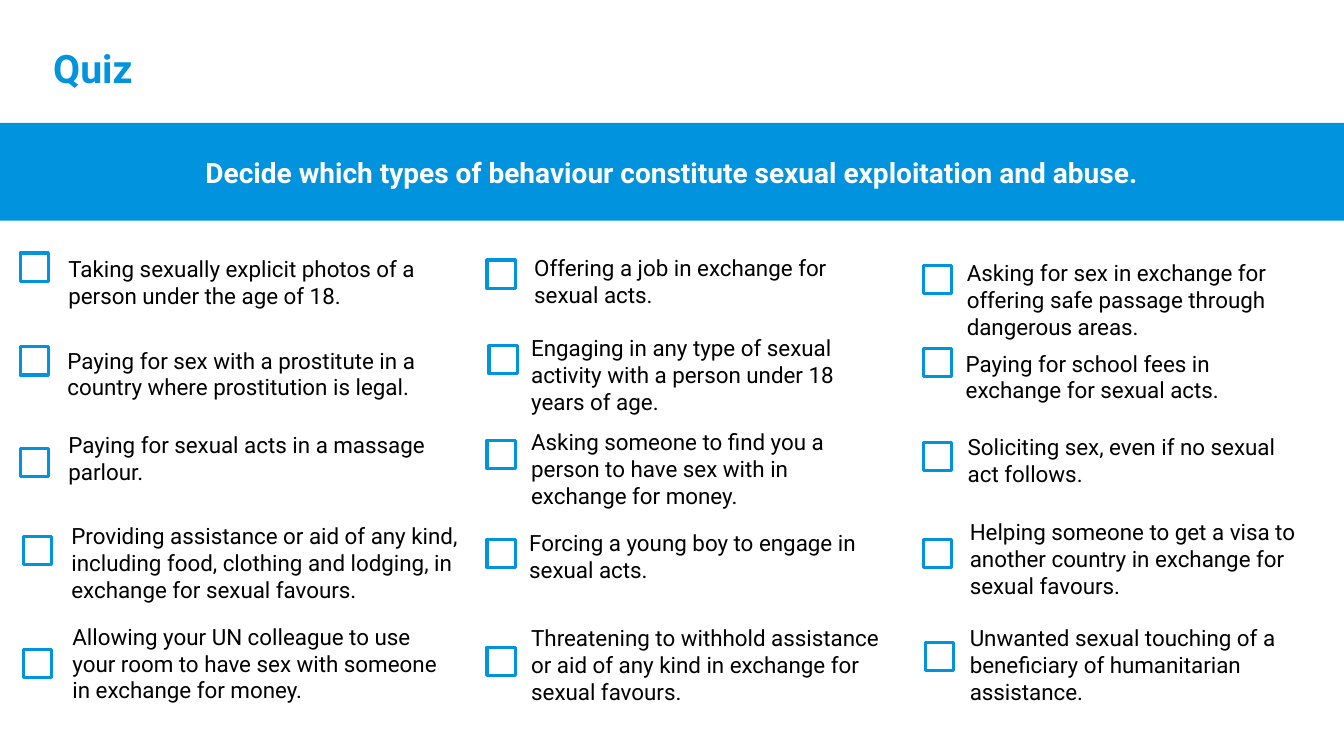
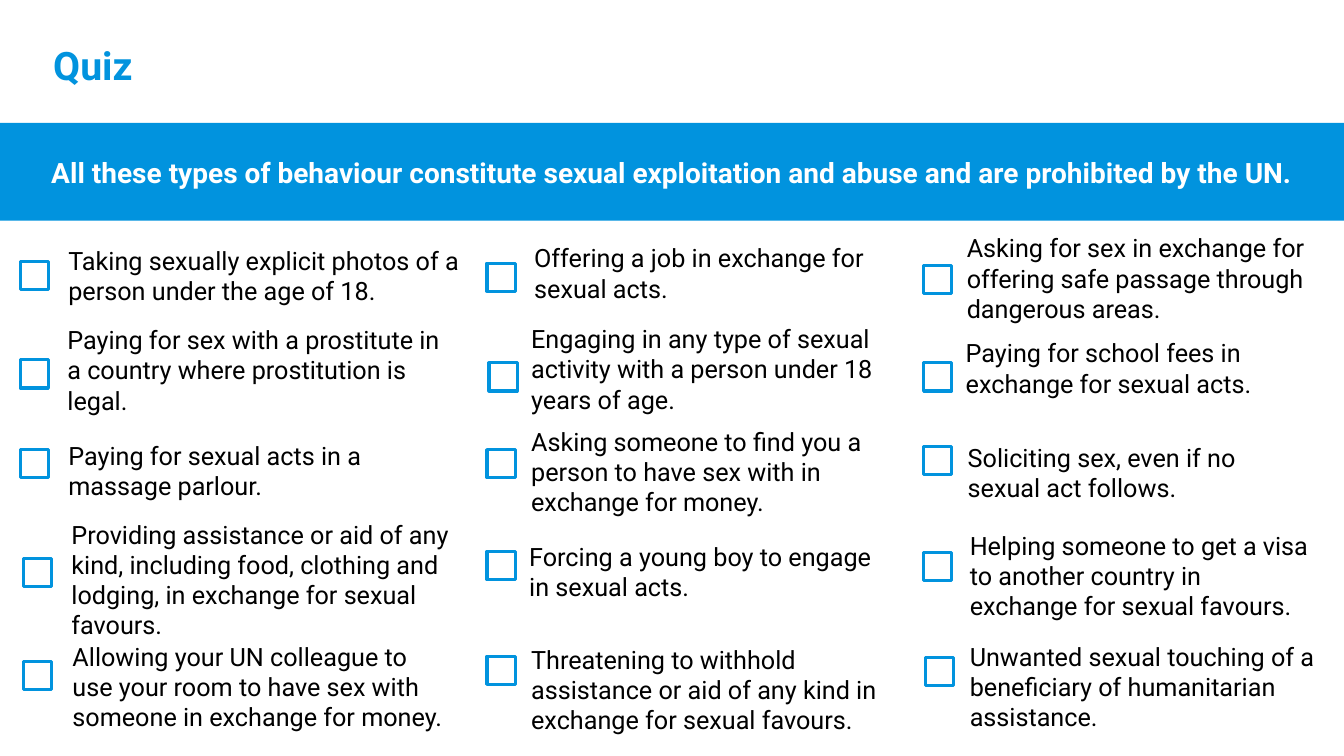
from pptx import Presentation
from pptx.dml.color import RGBColor
from pptx.enum.shapes import MSO_SHAPE
from pptx.enum.text import MSO_ANCHOR, MSO_AUTO_SIZE, PP_ALIGN
from pptx.util import Inches, Pt

RECT = MSO_SHAPE.RECTANGLE
MIDDLE = MSO_ANCHOR.MIDDLE
GROW = MSO_AUTO_SIZE.SHAPE_TO_FIT_TEXT
CENTER = PP_ALIGN.CENTER

FONT = "Roboto"
COLORS = {"blue": "0193DE", "white": "FFFFFF", "black": "000000"}
SLIDE_W, SLIDE_H = 13.33, 7.5
BOX_SIZE = 0.28

# Wording, checkbox left, text left, text width
BEHAVIOURS = [
    ("Taking sexually explicit photos of a person under the age of 18.", 0.2, 0.58, 4.33),
    ("Paying for sex with a prostitute in a country where prostitution is legal.",
     0.2, 0.57, 4.01),
    ("Paying for sexual acts in a massage parlour.", 0.2, 0.58, 4.15),
    ("Providing assistance or aid of any kind, including food, clothing and lodging, "
     "in exchange for sexual favours.", 0.23, 0.61, 4.05),
    ("Allowing your UN colleague to use your room to have sex with someone "
     "in exchange for money.", 0.23, 0.62, 3.95),
    ("Offering a job in exchange for sexual acts.", 4.83, 5.2, 3.74),
    ("Engaging in any type of sexual activity with a person under 18 years of age.",
     4.85, 5.17, 3.74),
    ("Asking someone to find you a person to have sex with in exchange for money.",
     4.83, 5.17, 3.7),
    ("Forcing a young boy to engage in sexual acts.", 4.83, 5.15, 3.79),
    ("Threatening to withhold assistance or aid of any kind in exchange for sexual favours.",
     4.83, 5.17, 3.87),
    ("Asking for sex in exchange for offering safe passage through dangerous areas.",
     9.16, 9.49, 3.98),
    ("Paying for school fees in exchange for sexual acts.", 9.16, 9.48, 3.62),
    ("Soliciting sex, even if no sexual act follows.", 9.16, 9.5, 3.6),
    ("Helping someone to get a visa to another country in exchange for sexual favours.",
     9.16, 9.52, 3.58),
    ("Unwanted sexual touching of a beneficiary of humanitarian assistance.",
     9.18, 9.52, 3.87),
]

# Rows hold checkbox top, text top and line count, in the order of BEHAVIOURS
SLIDES = [
    {
        "title_top": 0.39,
        "message": "Decide which types of behaviour constitute sexual exploitation and abuse.",
        "size": 16,
        "rows": [
            (2.51, 2.48, 2), (3.44, 3.39, 2), (4.45, 4.23, 2), (5.32, 5.13, 3), (6.44, 6.13, 3),
            (2.58, 2.47, 2), (3.43, 3.27, 3), (4.37, 4.2, 3), (5.35, 5.2, 2), (6.42, 6.14, 3),
            (2.63, 2.52, 3), (3.46, 3.42, 2), (4.39, 4.25, 2), (5.35, 5.09, 3), (6.37, 6.14, 3),
        ],
    },
    {
        "title_top": 0.36,
        "message": "All these types of behaviour constitute sexual exploitation and abuse "
                   "and are prohibited by the UN.",
        "size": 18,
        "rows": [
            (2.59, 2.38, 2), (3.57, 3.17, 3), (4.46, 4.32, 2), (5.54, 5.1, 4), (6.56, 6.31, 3),
            (2.61, 2.36, 2), (3.6, 3.16, 3), (4.46, 4.18, 3), (5.47, 5.32, 2), (6.51, 6.34, 3),
            (2.63, 2.26, 3), (3.6, 3.3, 2), (4.43, 4.34, 2), (5.48, 5.21, 3), (6.52, 6.31, 3),
        ],
    },
]


def rgb(name):
    return RGBColor.from_string(COLORS[name])


def add_run(p, text, size, color, bold=False):
    r = p.add_run()
    r.text = text
    r.font.name = FONT
    r.font.size = Pt(size)
    r.font.bold = bold
    r.font.color.rgb = rgb(color)


def add_text(s, left, top, width, text, size, lines=1, color="black", bold=False):
    """Add a wrapping text box as tall as its lines plus the insets."""
    height = 0.1 + lines * size * 1.2 / 72 * 0.98
    sp = s.shapes.add_textbox(Inches(left), Inches(top), Inches(width), Inches(height))
    tf = sp.text_frame
    tf.word_wrap = True
    tf.auto_size = GROW
    add_run(tf.paragraphs[0], text, size, color, bold)


def add_rect(s, left, top, width, height):
    sp = s.shapes.add_shape(RECT, Inches(left), Inches(top), Inches(width), Inches(height))
    sp.shadow.inherit = False
    return sp


def add_band(s, message):
    sp = add_rect(s, 0, 1.22, SLIDE_W, 0.97)
    sp.fill.solid()
    sp.fill.fore_color.rgb = rgb("blue")
    sp.line.fill.background()
    tf = sp.text_frame
    tf.word_wrap = True
    tf.vertical_anchor = MIDDLE
    p = tf.paragraphs[0]
    p.alignment = CENTER
    add_run(p, message, 20, "white", bold=True)


def add_checkbox(s, left, top):
    sp = add_rect(s, left, top, BOX_SIZE, BOX_SIZE)
    sp.fill.background()
    sp.line.color.rgb = rgb("blue")
    sp.line.width = Pt(2.25)


def add_quiz_slide(prs, quiz):
    s = prs.slides.add_slide(prs.slide_layouts[6])
    add_text(s, 0.43, quiz["title_top"], 6.67, "Quiz", 28, color="blue", bold=True)
    add_band(s, quiz["message"])
    for behaviour, row in zip(BEHAVIOURS, quiz["rows"]):
        text, box_left, text_left, width = behaviour
        box_top, text_top, lines = row
        add_checkbox(s, box_left, box_top)
        add_text(s, text_left, text_top, width, text, quiz["size"], lines)


def main():
    prs = Presentation()
    prs.slide_width = Inches(SLIDE_W)
    prs.slide_height = Inches(SLIDE_H)
    for quiz in SLIDES:
        add_quiz_slide(prs, quiz)
    prs.save("out.pptx")


if __name__ == "__main__":
    main()
